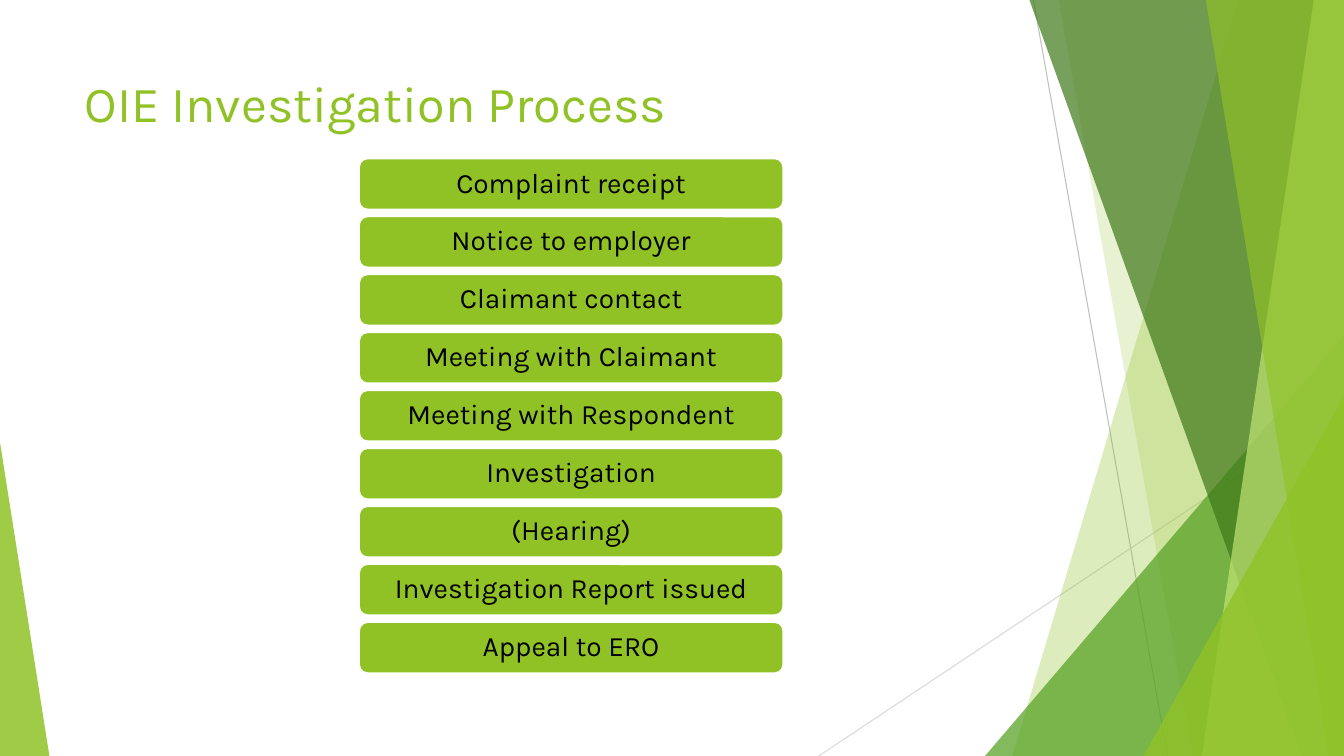
from collections import namedtuple

from lxml import etree
from pptx import Presentation
from pptx.dml.color import RGBColor
from pptx.enum.shapes import MSO_CONNECTOR, MSO_SHAPE
from pptx.enum.text import MSO_ANCHOR, PP_ALIGN
from pptx.oxml.ns import qn
from pptx.util import Inches, Pt

STRAIGHT = MSO_CONNECTOR.STRAIGHT
TRIANGLE = MSO_SHAPE.ISOSCELES_TRIANGLE
ROUNDED = MSO_SHAPE.ROUNDED_RECTANGLE
TOP, MIDDLE = MSO_ANCHOR.TOP, MSO_ANCHOR.MIDDLE
LEFT, CENTER = PP_ALIGN.LEFT, PP_ALIGN.CENTER

FONT = "Karla"
COLORS = {
    "lime": "90C226",
    "pale": "C0E474",
    "green": "54A021",
    "forest": "3F7819",
    "line": "BFBFBF",
    "light_line": "D9D9D9",
    "text": "000000",
    "white": "FFFFFF",
}
STEPS = [
    "Complaint receipt",
    "Notice to employer",
    "Claimant contact",
    "Meeting with Claimant",
    "Meeting with Respondent",
    "Investigation",
    "(Hearing)",
    "Investigation Report issued",
    "Appeal to ERO",
]

Box = namedtuple("Box", "left top width height")
PAGE = Box(0, 0, 13.33, 7.5)


def color(name):
    return RGBColor.from_string(COLORS[name])


def paint(shape, fill, opacity=100):
    """Fill a shape, in percent opacity, without outline or shadow."""
    shape.shadow.inherit = False
    shape.line.fill.background()
    shape.fill.solid()
    shape.fill.fore_color.rgb = color(fill)
    if opacity < 100:
        tint = shape.fill._xPr.find(".//" + qn("a:srgbClr"))
        etree.SubElement(tint, qn("a:alpha")).set("val", str(opacity * 1000))


def write(shape, text, size, ink, align, para_format, frame_format):
    frame = shape.text_frame
    for name, value in frame_format.items():
        setattr(frame, name, value)
    para = frame.paragraphs[0]
    for name, value in {"alignment": align, **para_format}.items():
        setattr(para, name, value)
    span = para.add_run()
    span.text = text
    for name, value in {"name": FONT, "size": Pt(size)}.items():
        setattr(span.font, name, value)
    span.font.color.rgb = color(ink)


def add_ray(page, start, end, ink):
    ray = page.shapes.add_connector(STRAIGHT, *map(Inches, start + end))
    ray.line.color.rgb = color(ink)
    ray.line.width = Pt(0.75)
    etree.SubElement(ray._element.spPr, qn("a:effectLst"))


def add_band(page, box, upper, lower, fill, opacity):
    """Band on the right edge, reaching left by upper at top and lower at bottom."""
    right, bottom = box.left + box.width, box.top + box.height
    corners = [(right - upper, box.top), (right, box.top),
               (right, bottom), (right - lower, bottom)]
    points = [(Inches(x), Inches(y)) for x, y in corners]
    builder = page.shapes.build_freeform(*points[0])
    builder.add_line_segments(points[1:], close=True)
    paint(builder.convert_to_shape(), fill, opacity)


def add_wedge(page, box, apex, fill, opacity):
    """Right triangle with its tip at the left (0) or right (1)."""
    wedge = page.shapes.add_shape(TRIANGLE, *map(Inches, box))
    wedge.adjustments[0] = apex
    paint(wedge, fill, opacity)


def add_facets(page, box):
    right, bottom = box.left + box.width, box.top + box.height
    add_ray(page, (right - 3.08, box.top), (right - 1.75, bottom), "line")
    add_ray(page, (right, box.top + 4.03), (right - 5.21, bottom), "light_line")

    def corner_wedge(width, height, fill, opacity):
        place = Box(right - width, bottom - height, width, height)
        add_wedge(page, place, 1, fill, opacity)

    add_band(page, box, 1.05, 3.29, "lime", 30)
    add_band(page, box, 2.83, 1.5, "lime", 20)
    corner_wedge(3.56, 4.17, "green", 72)
    add_band(page, box, 3.12, 0.42, "forest", 70)
    add_band(page, box, 0.3, 1.41, "pale", 70)
    add_band(page, box, 1.37, 0.15, "lime", 65)
    corner_wedge(1.99, 3.57, "lime", 80)
    add_wedge(page, Box(box.left, bottom - 3.11, 0.49, 3.11), 0, "lime", 85)


def add_title(page, box, text):
    title = page.shapes.add_textbox(*map(Inches, box))
    write(title, text, 36, "lime", LEFT, {},
          {"word_wrap": True, "vertical_anchor": TOP})


def add_steps(page, box, steps):
    """Stack of equal bars, spread evenly over the box."""
    bar_height = 0.51
    pitch = (box.height - bar_height) / (len(steps) - 1)
    margins = {f"margin_{side}": Inches(0.1)
               for side in ("left", "right", "top", "bottom")}
    for index, step in enumerate(steps):
        place = Box(box.left, box.top + index * pitch, box.width, bar_height)
        bar = page.shapes.add_shape(ROUNDED, *map(Inches, place))
        paint(bar, "lime")
        bar.line.color.rgb = color("white")
        bar.line.width = Pt(1.5)
        write(bar, step, 20, "text", CENTER, {"line_spacing": 0.9},
              {"word_wrap": True, "vertical_anchor": MIDDLE, **margins})


def main():
    deck = Presentation()
    deck.slide_width, deck.slide_height = Inches(PAGE.width), Inches(PAGE.height)
    page = deck.slides.add_slide(deck.slide_layouts[6])
    add_facets(page, PAGE)
    add_title(page, Box(0.74, 0.67, 9.4, 1.44), "OIE Investigation Process")
    add_steps(page, Box(3.56, 1.57, 4.21, 5.11), STEPS)
    deck.save("out.pptx")


if __name__ == "__main__":
    main()
